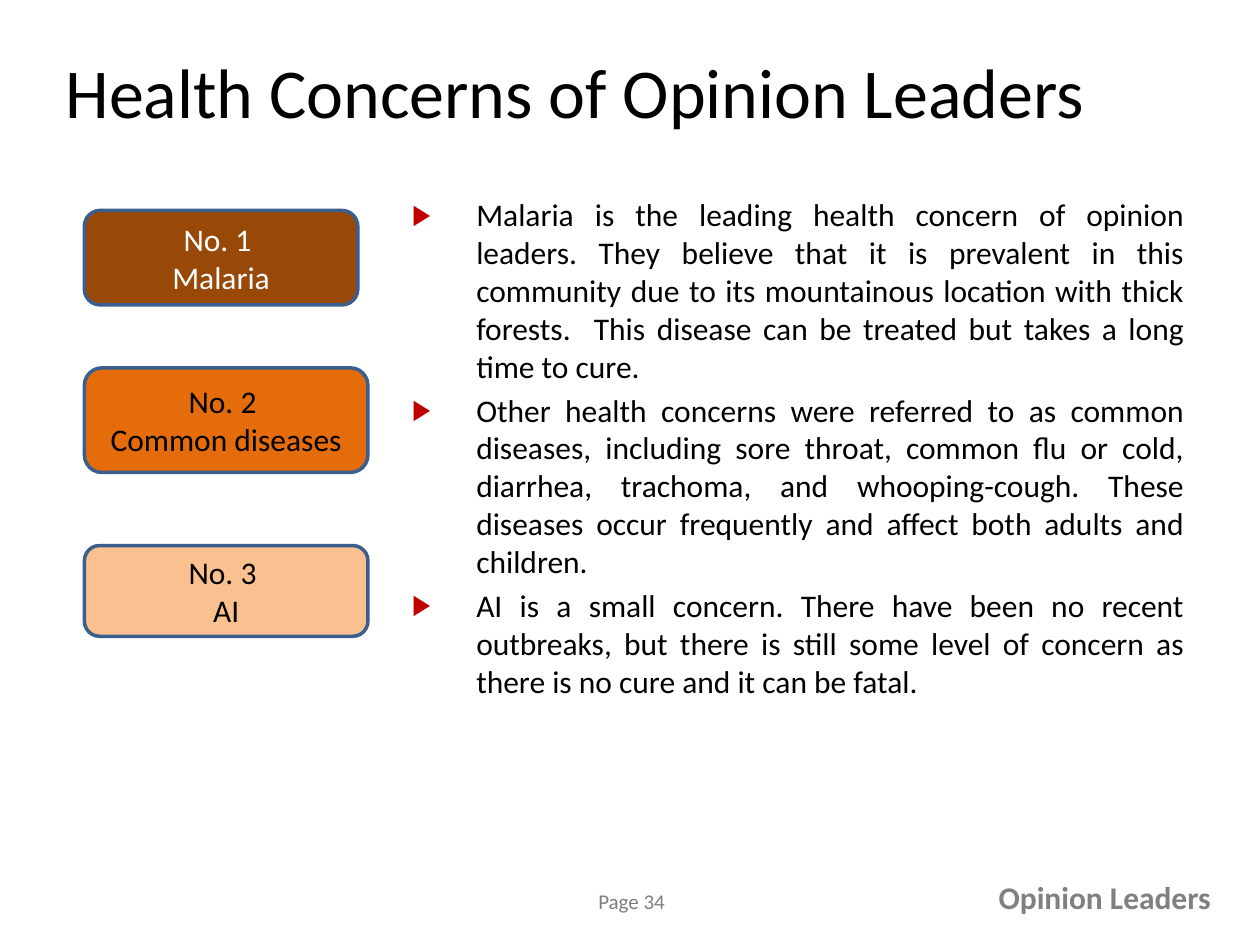
from dataclasses import dataclass

from lxml import etree
from pptx import Presentation
from pptx.dml.color import RGBColor
from pptx.enum.shapes import MSO_SHAPE
from pptx.enum.text import MSO_ANCHOR, MSO_AUTO_SIZE, PP_ALIGN
from pptx.oxml.ns import qn
from pptx.util import Inches, Pt

ROUNDED = MSO_SHAPE.ROUNDED_RECTANGLE
MIDDLE, TOP = MSO_ANCHOR.MIDDLE, MSO_ANCHOR.TOP
LEFT, CENTER, RIGHT, JUSTIFY = PP_ALIGN.LEFT, PP_ALIGN.CENTER, PP_ALIGN.RIGHT, PP_ALIGN.JUSTIFY
FONT = "Calibri"
BOX_LEFT = 0.67
BULLET_INDENT = 0.51


@dataclass
class Concern:
    name: str
    top: float
    width: float
    height: float
    fill: str
    color: str
    detail: str


CONCERNS = [
    Concern("Malaria", 1.67, 2.17, 0.75, "984807", "FFFFFF",
            "Malaria is the leading health concern of opinion leaders. They believe that "
            "it is prevalent in this community due to its mountainous location with thick "
            "forests.  This disease can be treated but takes a long time to cure. "),
    Concern("Common diseases", 2.92, 2.25, 0.83, "E46C0A", "000000",
            "Other health concerns were referred to as common diseases, including sore "
            "throat, common flu or cold, diarrhea, trachoma, and whooping-cough. These "
            "diseases occur frequently and affect both adults and children."),
    Concern("AI", 4.33, 2.25, 0.72, "FAC090", "000000",
            "AI is a small concern. There have been no recent outbreaks, but there is "
            "still some level of concern as there is no cure and it can be fatal."),
]


def rgb(color: str) -> RGBColor:
    return RGBColor.from_string(color)


def place(sp, left: float, top: float, width: float, height: float) -> None:
    sp.left, sp.top = Inches(left), Inches(top)
    sp.width, sp.height = Inches(width), Inches(height)


def write(sp, lines: list[str], size: int = 18, color: str = "000000", bold: bool = False,
          align: PP_ALIGN = LEFT, anchor: MSO_ANCHOR = TOP, wrap: bool = True) -> None:
    tf = sp.text_frame
    tf.word_wrap = wrap
    tf.auto_size = MSO_AUTO_SIZE.NONE if wrap else MSO_AUTO_SIZE.SHAPE_TO_FIT_TEXT
    tf.vertical_anchor = anchor
    for i, line in enumerate(lines):
        p = tf.add_paragraph() if i else tf.paragraphs[0]
        p.alignment = align
        r = p.add_run()
        r.text = line
        r.font.name, r.font.size, r.font.bold = FONT, Pt(size), bold
        r.font.color.rgb = rgb(color)


def add_bullet(p) -> None:
    pPr = p._p.get_or_add_pPr()
    pPr.set("marL", str(Inches(BULLET_INDENT)))
    pPr.set("indent", str(-Inches(BULLET_INDENT)))
    color = etree.SubElement(pPr, qn("a:buClr"))
    etree.SubElement(color, qn("a:srgbClr"), val="C00000")
    etree.SubElement(pPr, qn("a:buSzPct"), val="90000")
    etree.SubElement(pPr, qn("a:buFont"), typeface="Arial")
    etree.SubElement(pPr, qn("a:buChar"), char="▶")


def add_concern_box(s, rank: int, concern: Concern) -> None:
    sp = s.shapes.add_shape(ROUNDED, 0, 0, 0, 0)
    place(sp, BOX_LEFT, concern.top, concern.width, concern.height)
    sp.shadow.inherit = False
    sp.fill.solid()
    sp.fill.fore_color.rgb = rgb(concern.fill)
    sp.line.color.rgb = rgb("3A5F8C")
    sp.line.width = Pt(2)
    write(sp, [f"No. {rank} ", concern.name], color=concern.color, align=CENTER, anchor=MIDDLE)


def add_label(s, text: str, left: float, top: float, width: float, height: float,
              **fmt) -> None:
    sp = s.shapes.add_textbox(0, 0, 0, 0)
    write(sp, [text], wrap=False, **fmt)
    place(sp, left, top, width, height)


def main() -> None:
    prs = Presentation()
    prs.slide_width, prs.slide_height = Inches(10), Inches(7.5)
    s = prs.slides.add_slide(prs.slide_layouts[1])

    title, body = s.shapes.title, s.placeholders[1]
    place(title, 0.42, 0.33, 9, 0.78)
    write(title, ["Health Concerns of Opinion Leaders"], size=40, anchor=MIDDLE)

    place(body, 3.17, 1.5, 6.33, 5.08)
    write(body, [c.detail for c in CONCERNS], align=JUSTIFY)
    for p in body.text_frame.paragraphs:
        add_bullet(p)

    for rank, concern in enumerate(CONCERNS, start=1):
        add_concern_box(s, rank, concern)

    add_label(s, "Page 34", 4.65, 7, 0.77, 0.3, size=12, color="7F7F7F")
    add_label(s, "Opinion Leaders", 7.81, 6.92, 1.9, 0.4, color="808080", bold=True, align=RIGHT)
    prs.save("out.pptx")


if __name__ == "__main__":
    main()
